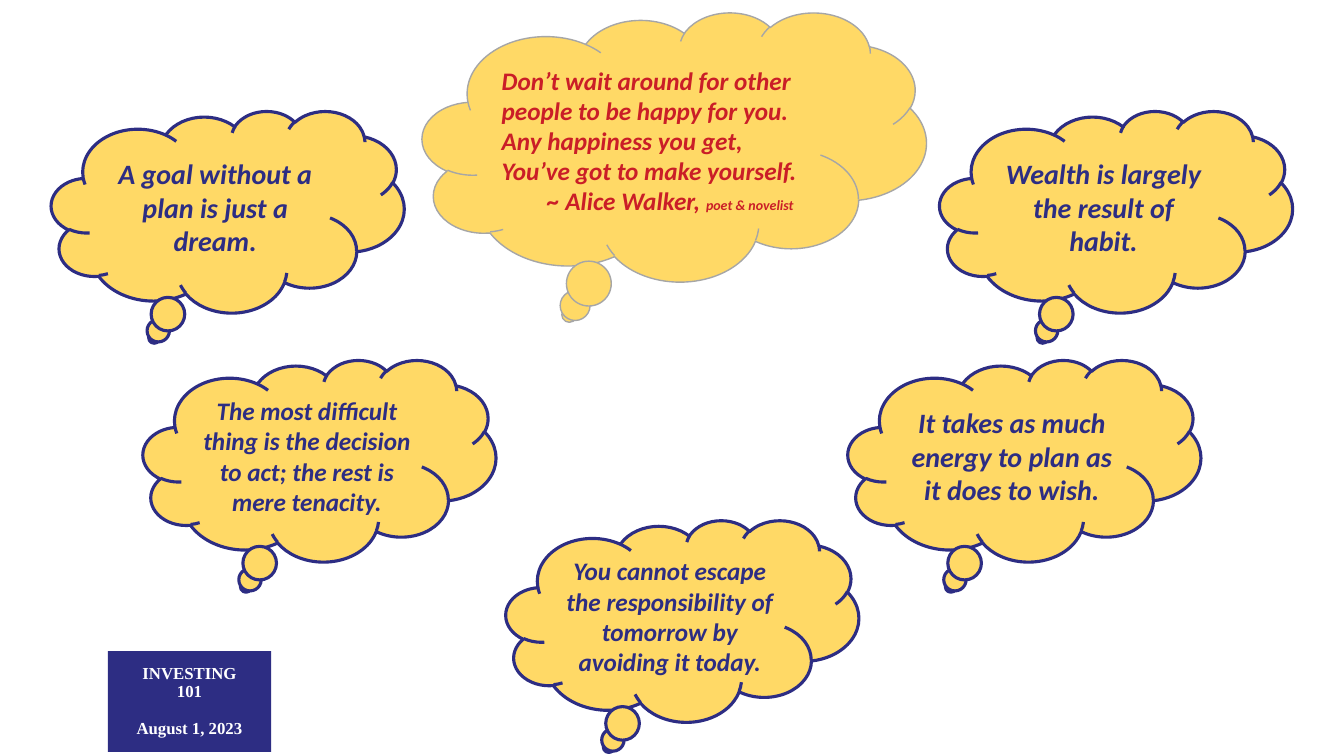
from dataclasses import dataclass

from pptx import Presentation
from pptx.dml.color import RGBColor
from pptx.enum.shapes import MSO_SHAPE
from pptx.enum.text import MSO_ANCHOR, PP_ALIGN
from pptx.shapes.autoshape import Shape
from pptx.slide import Slide
from pptx.text.text import TextFrame
from pptx.util import Pt

WIDTH, HEIGHT = 960, 540
CLOUD_W, CLOUD_H = 252, 144


@dataclass(frozen=True)
class Theme:
    navy: str = "2D2D83"
    gold: str = "FFD966"
    red: str = "CA1E27"
    grey: str = "A6A6A6"
    white: str = "FFFFFF"
    sans: str = "Calibri"
    serif: str = "Times New Roman"
    large: float = 20
    medium: float = 18
    small: float = 12
    tiny: float = 10


THEME = Theme()


@dataclass(frozen=True)
class Box:
    left: float
    top: float
    width: float = CLOUD_W
    height: float = CLOUD_H


@dataclass(frozen=True)
class Quote:
    box: Box
    text: str
    size: float


def mirror(left: float) -> float:
    """Left edge of the cloud facing the one at the given left edge."""
    return WIDTH - CLOUD_W - left


OUTER, INNER = 36.72, 102.24
UPPER, LOWER = 79.2, 257.04

QUOTES = [
    Quote(Box(OUTER, UPPER), "A goal without a plan is just a dream.", THEME.large),
    Quote(Box(INNER, LOWER),
          "The most difficult thing is the decision to act; the rest is mere tenacity.",
          THEME.medium),
    Quote(Box(mirror(OUTER), UPPER), "Wealth is largely the result of habit.", THEME.large),
    Quote(Box(mirror(INNER), LOWER),
          "It takes as much energy to plan as it does to wish.", THEME.large),
    Quote(Box(361.44, 371.52),
          "You cannot escape the responsibility of tomorrow by avoiding it today.",
          THEME.medium),
]
POEM = [
    "Don’t wait around for other people to be happy for you.",
    "Any happiness you get,",
    "You’ve got to make yourself.",
]


def add_text(frame: TextFrame, text: str, *, size: float, color: str,
             font: str = THEME.sans, italic: bool = True,
             align: PP_ALIGN = PP_ALIGN.CENTER, spacing: float = 1,
             before: float = 0, indent: float = 0, join: bool = False) -> None:
    """Add a paragraph, or with join a further run in the last one."""
    para = frame.paragraphs[-1]
    if not join:
        if para.runs:
            para = frame.add_paragraph()
        para.alignment = align
        para.line_spacing = spacing
        para.space_before = Pt(before)
        if indent:
            props = para._p.get_or_add_pPr()
            props.set("marL", str(Pt(indent)))
            props.set("indent", "0")
    run = para.add_run()
    run.text = text
    run.font.name = font
    run.font.size = Pt(size)
    run.font.bold = True
    run.font.italic = italic
    run.font.color.rgb = RGBColor.from_string(color)


def add_box(slide: Slide, kind: MSO_SHAPE, box: Box, fill: str,
            line: str = "", weight: float = 0) -> Shape:
    shape = slide.shapes.add_shape(
        kind, Pt(box.left), Pt(box.top), Pt(box.width), Pt(box.height))
    shape.shadow.inherit = False
    shape.fill.solid()
    shape.fill.fore_color.rgb = RGBColor.from_string(fill)
    if line:
        shape.line.color.rgb = RGBColor.from_string(line)
        shape.line.width = Pt(weight)
    else:
        shape.line.fill.background()
    shape.text_frame.word_wrap = True
    shape.text_frame.vertical_anchor = MSO_ANCHOR.MIDDLE
    return shape


def add_badge(slide: Slide) -> None:
    box = Box(77.04, 465.12, 116.64, 72)
    frame = add_box(slide, MSO_SHAPE.RECTANGLE, box, THEME.navy).text_frame
    for text, before in [("INVESTING", 0), ("101", 0), ("August 1, 2023", 13)]:
        add_text(frame, text, size=THEME.small, color=THEME.white, font=THEME.serif,
                 italic=False, spacing=0.9, before=before)


def add_quote(slide: Slide, quote: Quote) -> None:
    cloud = add_box(slide, MSO_SHAPE.CLOUD_CALLOUT, quote.box, THEME.gold, THEME.navy, 2.25)
    add_text(cloud.text_frame, quote.text, size=quote.size, color=THEME.navy)


def add_poem(slide: Slide) -> None:
    box = Box(301.68, 8.64, 360, 192.24)
    frame = add_box(slide, MSO_SHAPE.CLOUD_CALLOUT, box, THEME.gold, THEME.grey, 1).text_frame
    for text in POEM:
        add_text(frame, text, size=THEME.medium, color=THEME.red, align=PP_ALIGN.LEFT)
    add_text(frame, "~ Alice Walker, ", size=THEME.medium, color=THEME.red,
             align=PP_ALIGN.LEFT, indent=32.5)
    add_text(frame, "poet & novelist", size=THEME.tiny, color=THEME.red, join=True)


def main() -> None:
    deck = Presentation()
    deck.slide_width, deck.slide_height = Pt(WIDTH), Pt(HEIGHT)
    slide = deck.slides.add_slide(deck.slide_layouts.get_by_name("Blank"))
    add_badge(slide)
    for quote in QUOTES:
        add_quote(slide, quote)
    add_poem(slide)
    deck.save("out.pptx")


if __name__ == "__main__":
    main()
